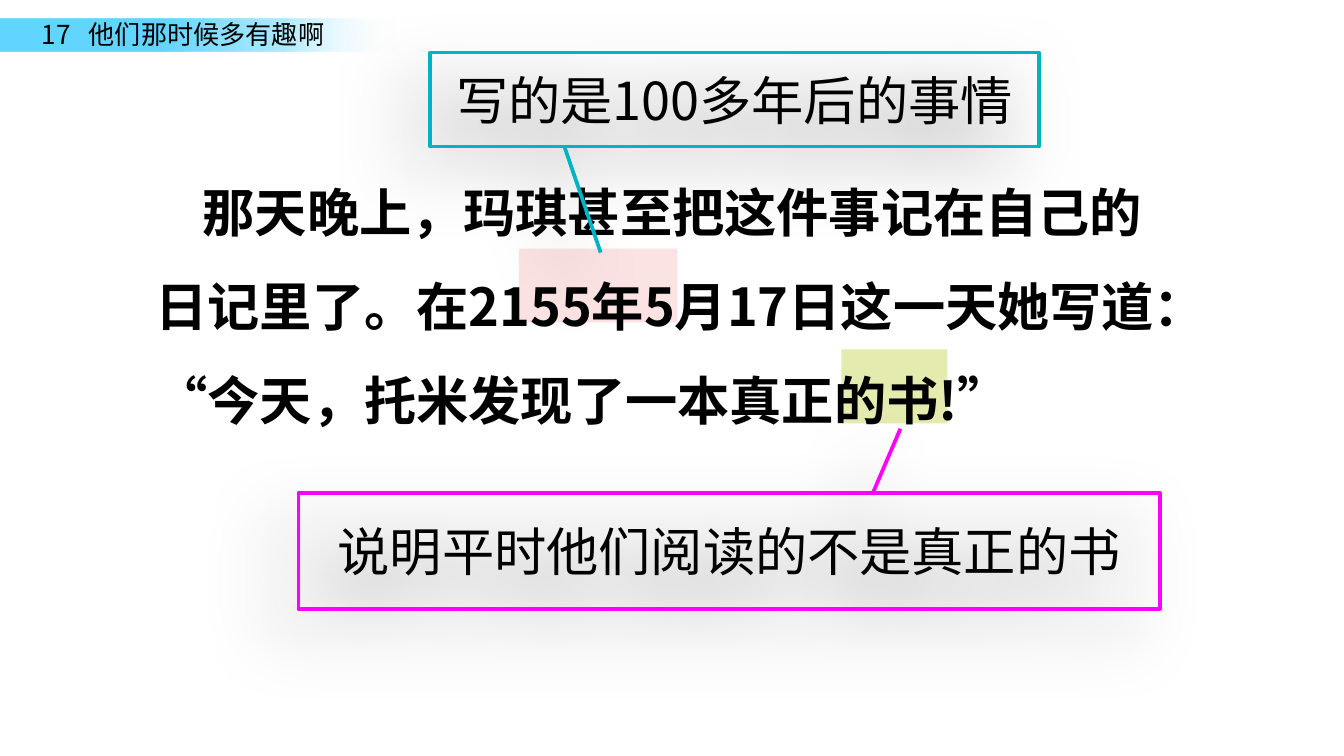
import dataclasses

import pptx
import pptx.dml.color
import pptx.enum.shapes
import pptx.enum.text
import pptx.oxml
import pptx.oxml.ns
import pptx.util
from pptx.util import Inches

FONT = "Noto Sans CJK SC"
COLORS = {
    "text": "000000",
    "sky": "63D6FF",
    "pale_sky": "97E4FF",
    "white": "FFFFFF",
    "green": "E5EBAF",
    "pink": "FCE3E3",
    "teal": "02B3C5",
    "magenta": "FF00FF",
}
NS = pptx.oxml.ns.nsdecls("a")
SHAPE = pptx.enum.shapes.MSO_SHAPE
ALIGN = pptx.enum.text.PP_ALIGN
ANCHOR = pptx.enum.text.MSO_ANCHOR


@dataclasses.dataclass
class Box:
    left: float
    top: float
    width: float
    height: float

    def lengths(self) -> tuple:
        return tuple(Inches(v) for v in dataclasses.astuple(self))


@dataclasses.dataclass
class Highlight:
    box: Box
    color: str


@dataclasses.dataclass
class Callout:
    box: Box
    color: str
    text: str
    start: tuple  # pointer ends as (x, y) on the slide
    end: tuple


HIGHLIGHTS = [
    Highlight(Box(6.26, 2.6, 0.79, 0.55), "green"),
    Highlight(Box(3.86, 1.85, 1.18, 0.55), "pink"),
]
CALLOUTS = [
    Callout(Box(3.2, 0.39, 4.53, 0.7), "teal", "写的是100多年后的事情",
            (4.47, 1.88), (4.2, 1.09)),
    Callout(Box(2.22, 3.67, 6.41, 0.86), "magenta", "说明平时他们阅读的不是真正的书",
            (6.49, 3.68), (6.7, 3.19)),
]


def rgb(name: str) -> pptx.dml.color.RGBColor:
    return pptx.dml.color.RGBColor.from_string(COLORS[name])


def add_run(p, text: str, size: float, bold: bool = False) -> None:
    r = p.add_run()
    r.text = text
    r.font.size = pptx.util.Pt(size)
    r.font.bold = bold
    r.font.name = FONT
    r.font.color.rgb = rgb("text")
    latin = r.font._element.find(pptx.oxml.ns.qn("a:latin"))
    latin.addnext(pptx.oxml.parse_xml(f'<a:ea {NS} typeface="{FONT}"/>'))


def add_rect(s, box: Box):
    sp = s.shapes.add_shape(SHAPE.RECTANGLE, *box.lengths())
    sp.shadow.inherit = False
    sp.line.fill.background()
    return sp


def add_header(s, box: Box, number: str, text: str) -> None:
    # Strip fading to the right, placed behind the title
    strip = add_rect(s, Box(0, 0.14, 3.03, 0.24))
    strip.fill.background()
    stops = "".join(
        f'<a:gs pos="{pos * 1000}"><a:srgbClr val="{COLORS[color]}">'
        f'<a:alpha val="{alpha * 1000}"/></a:srgbClr></a:gs>'
        for pos, color, alpha in [(40, "sky", 100), (70, "pale_sky", 76), (97, "white", 0)])
    gradient = pptx.oxml.parse_xml(
        f'<a:gradFill {NS} rotWithShape="1"><a:gsLst>{stops}</a:gsLst>'
        '<a:lin ang="0" scaled="0"/></a:gradFill>')
    sp_pr = strip.element.spPr
    sp_pr.replace(sp_pr.find(pptx.oxml.ns.qn("a:noFill")), gradient)

    # Title: lesson number, tab, lesson name
    title = s.shapes.title
    title.element.addprevious(strip.element)
    title.left, title.top, title.width, title.height = box.lengths()
    tf = title.text_frame
    tf.word_wrap = True
    tf.auto_size = pptx.enum.text.MSO_AUTO_SIZE.NONE
    tf.vertical_anchor = ANCHOR.MIDDLE
    p = tf.paragraphs[0]
    p.alignment = ALIGN.LEFT
    p._p.get_or_add_pPr().append(pptx.oxml.parse_xml(
        f'<a:tabLst {NS}><a:tab pos="{Inches(0.35)}" algn="l"/></a:tabLst>'))
    add_run(p, f"{number}\t{text}", 14)


def add_highlight(s, mark: Highlight) -> None:
    sp = add_rect(s, mark.box)
    sp.fill.solid()
    sp.fill.fore_color.rgb = rgb(mark.color)


def add_passage(s, box: Box, text: str) -> None:
    tf = s.shapes.add_textbox(*box.lengths()).text_frame
    tf.word_wrap = True
    p = tf.paragraphs[0]
    p.line_spacing = 1.5
    p._p.get_or_add_pPr().set("indent", str(Inches(0.35)))
    add_run(p, text, 28, bold=True)


def add_callout(s, note: Callout) -> None:
    box = note.box
    sp = s.shapes.add_shape(SHAPE.LINE_CALLOUT_1, *box.lengths())
    for i, (x, y) in enumerate((note.start, note.end)):
        sp.adjustments[2 * i] = (y - box.top) / box.height
        sp.adjustments[2 * i + 1] = (x - box.left) / box.width
    sp.fill.background()
    sp.line.color.rgb = rgb(note.color)
    sp.line.width = pptx.util.Pt(2)

    # Soft shadow towards the lower left
    sp.shadow.inherit = False
    effects = sp.element.spPr.find(pptx.oxml.ns.qn("a:effectLst"))
    effects.append(pptx.oxml.parse_xml(
        f'<a:outerShdw {NS} blurRad="{pptx.util.Pt(35)}" dist="{pptx.util.Pt(20)}" '
        f'dir="{135 * 60000}" rotWithShape="0"><a:srgbClr val="{COLORS["text"]}">'
        '<a:alpha val="50000"/></a:srgbClr></a:outerShdw>'))

    tf = sp.text_frame
    tf.word_wrap = True
    tf.vertical_anchor = ANCHOR.MIDDLE
    p = tf.paragraphs[0]
    p.alignment = ALIGN.CENTER
    add_run(p, note.text, 28)


def main() -> None:
    # Widescreen page, 16:9
    prs = pptx.Presentation()
    prs.slide_width, prs.slide_height = Inches(10), Inches(10 * 9 / 16)
    s = prs.slides.add_slide(prs.slide_layouts[5])

    add_header(s, Box(0.21, 0.08, 2.36, 0.34), "17", "他们那时候多有趣啊")
    for mark in HIGHLIGHTS:
        add_highlight(s, mark)
    add_passage(s, Box(1.06, 1.06, 7.77, 2.22),
                "那天晚上，玛琪甚至把这件事记在自己的日记里了。"
                "在2155年5月17日这一天她写道：“今天，托米发现了一本真正的书!”")
    for note in CALLOUTS:
        add_callout(s, note)

    prs.save("out.pptx")


if __name__ == "__main__":
    main()
